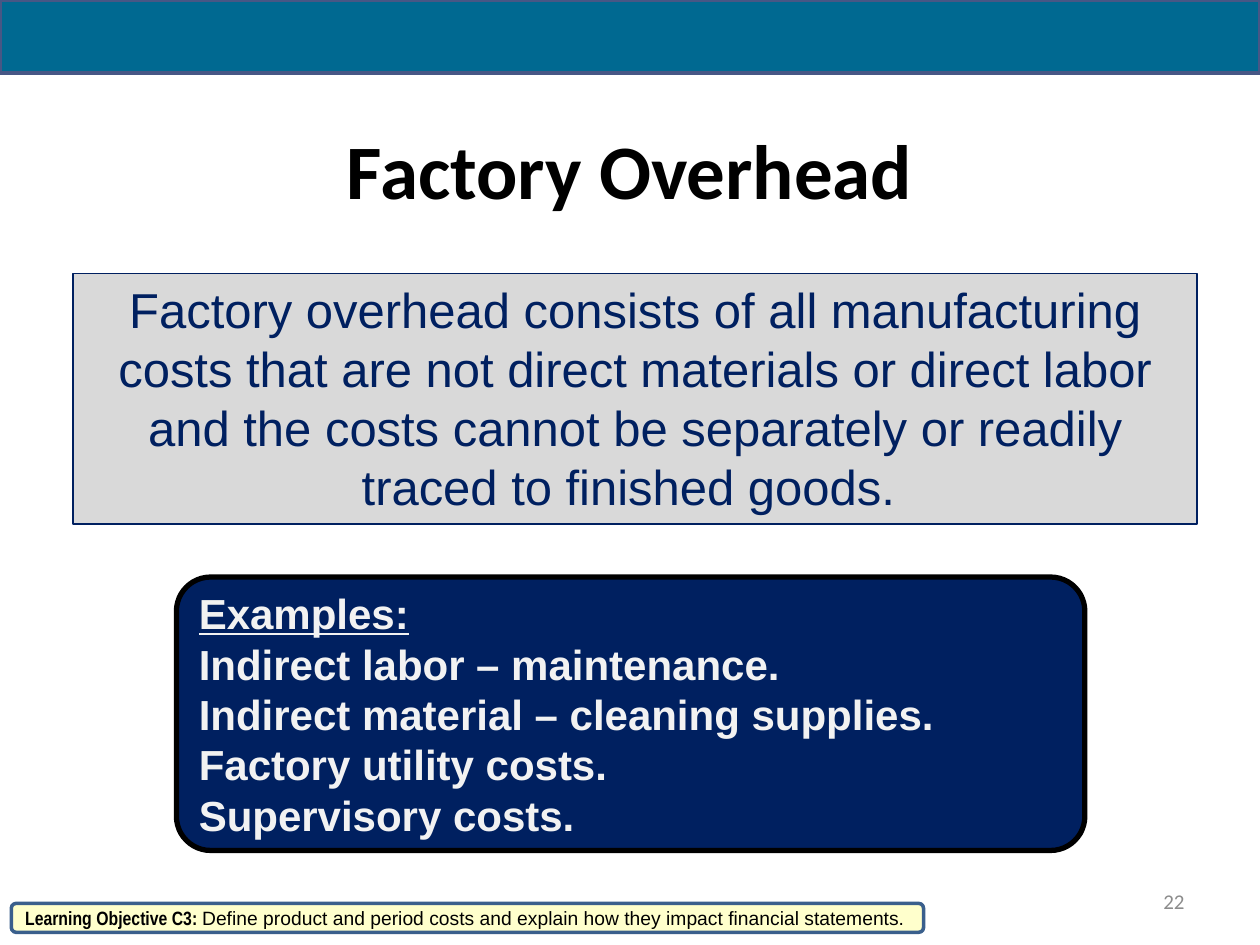
from pptx import Presentation
from pptx.dml.color import RGBColor
from pptx.enum.shapes import MSO_SHAPE as SHAPE
from pptx.enum.text import MSO_ANCHOR as ANCHOR, PP_ALIGN as ALIGN
from pptx.util import Inches, Pt

COLORS = {
    "black": "000000", "navy": "002060", "grey": "D9D9D9", "light": "F2F2F2",
    "teal": "006991", "violet": "475785", "cream": "FFFFCC", "blue": "3A5F8C",
    "number": "8C8C8C",
}


def color(name):
    """Return the named colour."""
    return RGBColor.from_string(COLORS[name])


def add_run(p, text, ink, **fmt):
    """Add a run and set its font from the format values."""
    r = p.add_run()
    r.text = text
    r.font.color.rgb = color(ink)
    for key, value in fmt.items():
        setattr(r.font, key, value)


def set_frame(tf, anchor=ANCHOR.MIDDLE, wrap=True):
    """Set anchor and wrapping, and return the first paragraph."""
    tf.vertical_anchor = anchor
    tf.word_wrap = wrap
    return tf.paragraphs[0]


def add_panel(slide, box, kind, fill, line, width):
    """Add a filled, outlined shape without shadow."""
    sp = slide.shapes.add_shape(kind, *map(Inches, box))
    sp.shadow.inherit = False
    sp.fill.solid()
    sp.fill.fore_color.rgb = color(fill)
    sp.line.color.rgb = color(line)
    sp.line.width = Pt(width)
    return sp


def add_title(slide, box, text):
    """Place and format the title placeholder."""
    sp = slide.shapes.title
    sp.left, sp.top, sp.width, sp.height = map(Inches, box)
    p = set_frame(sp.text_frame)
    p.alignment = ALIGN.CENTER
    add_run(p, text, "black", name="Calibri", size=Pt(44), bold=True)


def add_definition(slide, box, text):
    """Add the grey box with the centred definition."""
    sp = add_panel(slide, box, SHAPE.RECTANGLE, "grey", "navy", 0.75)
    p = set_frame(sp.text_frame, ANCHOR.TOP)
    p.alignment = ALIGN.CENTER
    add_run(p, text, "navy", name="Arial", size=Pt(28))


def add_examples(slide, box, heading, items):
    """Add the navy box with an underlined heading and its examples."""
    sp = add_panel(slide, box, SHAPE.ROUNDED_RECTANGLE, "navy", "black", 3)
    sp.adjustments[0] = 0.125
    tf = sp.text_frame
    p = set_frame(tf, wrap=True)
    for i, text in enumerate([heading, *items]):
        p = tf.add_paragraph() if i else p
        p.alignment = ALIGN.LEFT
        add_run(p, text, "light", name="Arial", size=Pt(24), bold=True,
                underline=i == 0)


def add_objective(slide, box, label, text):
    """Add the learning objective strip."""
    sp = add_panel(slide, box, SHAPE.ROUNDED_RECTANGLE, "cream", "blue", 2)
    p = set_frame(sp.text_frame)
    p.alignment = ALIGN.LEFT
    add_run(p, label, "black", name="Arial Narrow", size=Pt(11), bold=True)
    add_run(p, text, "black", name="Arial", size=Pt(11))


def add_number(slide, box, text):
    """Add the slide number."""
    sp = slide.shapes.add_textbox(*map(Inches, box))
    p = set_frame(sp.text_frame)
    p.alignment = ALIGN.RIGHT
    add_run(p, text, "number", name="Calibri", size=Pt(12))


def main():
    """Build and save the slide."""
    prs = Presentation()
    prs.slide_width, prs.slide_height = Inches(10), Inches(7.5)
    slide = prs.slides.add_slide(prs.slide_layouts[5])
    add_examples(slide, (1.4, 4.58, 7.21, 2.17), "Examples:", [
        "Indirect labor – maintenance.",
        "Indirect material – cleaning supplies.",
        "Factory utility costs.",
        "Supervisory costs.",
    ])
    add_title(slide, (0.5, 0.75, 9, 1.17), "Factory Overhead")
    add_definition(
        slide, (0.58, 2.17, 8.92, 1.99),
        "Factory overhead consists of all manufacturing costs that are not "
        "direct materials or direct labor and the costs cannot be separately "
        "or readily traced to finished goods. ")
    add_panel(slide, (0, 0, 10, 0.58), SHAPE.RECTANGLE, "teal", "violet", 2.25)
    add_number(slide, (7.17, 6.95, 2.33, 0.4), "22")
    add_objective(
        slide, (0.09, 7.17, 7.24, 0.23), "Learning Objective C3: ",
        "Define product and period costs and explain how they impact "
        "financial statements.")
    prs.save("out.pptx")


if __name__ == "__main__":
    main()
